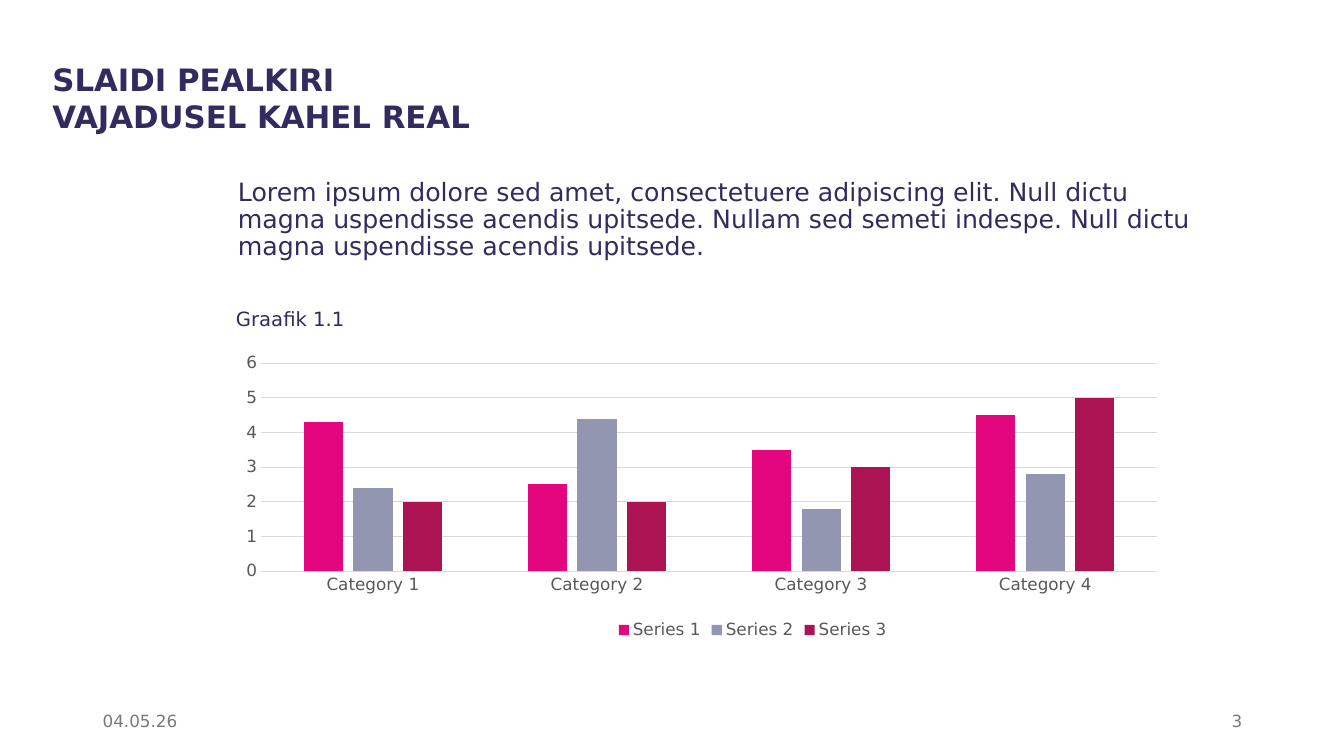
"""Build a slide with a title, an introduction and a clustered column chart."""
from lxml.etree import SubElement
from pptx import Presentation
from pptx.chart.data import CategoryChartData
from pptx.dml.color import RGBColor
from pptx.enum.chart import XL_CHART_TYPE as ChartType, XL_LEGEND_POSITION as LegendPosition
from pptx.enum.chart import XL_TICK_MARK as TickMark
from pptx.enum.text import MSO_ANCHOR as Anchor, MSO_AUTO_SIZE as AutoSize, PP_ALIGN as Align
from pptx.oxml import parse_xml
from pptx.oxml.ns import nsdecls, qn
from pptx.util import Inches, Pt

FONT = "DejaVu Sans"
NAVY, GREY, FOOTER_GREY, GRID = "332B60", "595959", "797979", "D9D9D9"


def color(hex_code):
    return RGBColor.from_string(hex_code)


def write(holder, box, lines, size, hex_code, inset=0, anchor=Anchor.TOP, bold=False):
    holder.left, holder.top, holder.width, holder.height = map(Inches, box)
    frame = holder.text_frame
    frame.word_wrap = True
    frame.auto_size = AutoSize.NONE
    frame.vertical_anchor = anchor
    frame.margin_left = frame.margin_right = Inches(inset)
    frame.margin_top = frame.margin_bottom = Inches(inset / 2)
    paragraph = frame.paragraphs[0]
    paragraph.alignment = Align.LEFT
    paragraph.space_before = Pt(0)
    for number, line in enumerate(lines):
        if number:
            paragraph.add_line_break()
        run = paragraph.add_run()
        run.text = line
        run.font.name = FONT
        run.font.size = Pt(size)
        run.font.bold = bold
        run.font.color.rgb = color(hex_code)
    return paragraph


deck = Presentation()
deck.slide_width, deck.slide_height = Inches(13.33), Inches(7.5)
slide = deck.slides.add_slide(deck.slide_layouts[1])

write(slide.shapes.title, (0.52, 0.6, 11.48, 0.88),
      ["SLAIDI PEALKIRI", "VAJADUSEL KAHEL REAL"], 22, NAVY, bold=True)

intro = write(slide.placeholders[1], (2.36, 1.78, 9.63, 0.87),
              ["Lorem ipsum dolore sed amet, consectetuere adipiscing elit. "
               "Null dictu magna uspendisse acendis upitsede. "
               "Nullam sed semeti indespe. "
               "Null dictu magna uspendisse acendis upitsede."], 18, NAVY)
intro_format = intro._p.get_or_add_pPr()
intro_format.set("marL", "0")
intro_format.set("indent", "0")
SubElement(intro_format, qn("a:buNone"))
intro.line_spacing = 0.9

chart_area = [Inches(length) for length in (2.32, 3.46, 10.29, 2.93)]
results = CategoryChartData()
results.categories = [f"Category {number}" for number in range(1, 5)]
results.add_series("Series 1", (4.3, 2.5, 3.5, 4.5))
results.add_series("Series 2", (2.4, 4.4, 1.8, 2.8))
results.add_series("Series 3", (2, 2, 3, 5))
chart = slide.shapes.add_chart(ChartType.COLUMN_CLUSTERED, *chart_area, results).chart
chart.has_title = False
chart.font.name = FONT
chart.font.size = Pt(12)
chart.font.color.rgb = color(GREY)
chart.has_legend = True
chart.legend.position = LegendPosition.BOTTOM
chart.legend.include_in_layout = False

columns = chart.plots[0]
columns.gap_width = 219
columns.overlap = -27
columns.vary_by_categories = False
for series, fill in zip(columns.series, ("E4067E", "9396B0", "AB1352")):
    series.format.fill.solid()
    series.format.fill.fore_color.rgb = color(fill)

categories, values = chart.category_axis, chart.value_axis
values.minimum_scale, values.maximum_scale, values.major_unit = 0, 6, 1
values.has_major_gridlines = True
values.format.line.fill.background()
for axis in (categories, values):
    axis.major_tick_mark = axis.minor_tick_mark = TickMark.NONE
for line in (categories.format.line, values.major_gridlines.format.line):
    line.width = Pt(0.75)
    line.color.rgb = color(GRID)

plot_area = chart._chartSpace.chart.plotArea
for layout in plot_area.findall(qn("c:layout")):
    plot_area.remove(layout)
plot_area.insert(0, parse_xml(
    f'<c:layout {nsdecls("c")}><c:manualLayout><c:layoutTarget val="inner"/>'
    '<c:xMode val="edge"/><c:yMode val="edge"/><c:x val="0.026"/><c:y val="0.049"/>'
    '<c:w val="0.864"/><c:h val="0.704"/></c:manualLayout></c:layout>'))

caption_area = (2.34, 3.04, 9.65, 0.34)
caption = slide.shapes.add_textbox(*map(Inches, caption_area))
write(caption, caption_area, ["Graafik 1.1"], 14, NAVY)

for left, label, alignment in ((0.92, "04.05.26", Align.LEFT), (9.42, "3", Align.RIGHT)):
    footer_area = (left, 6.95, 3, 0.4)
    footer = slide.shapes.add_textbox(*map(Inches, footer_area))
    write(footer, footer_area, [label], 12, FOOTER_GREY, 0.1, Anchor.MIDDLE).alignment = alignment

deck.save("out.pptx")
